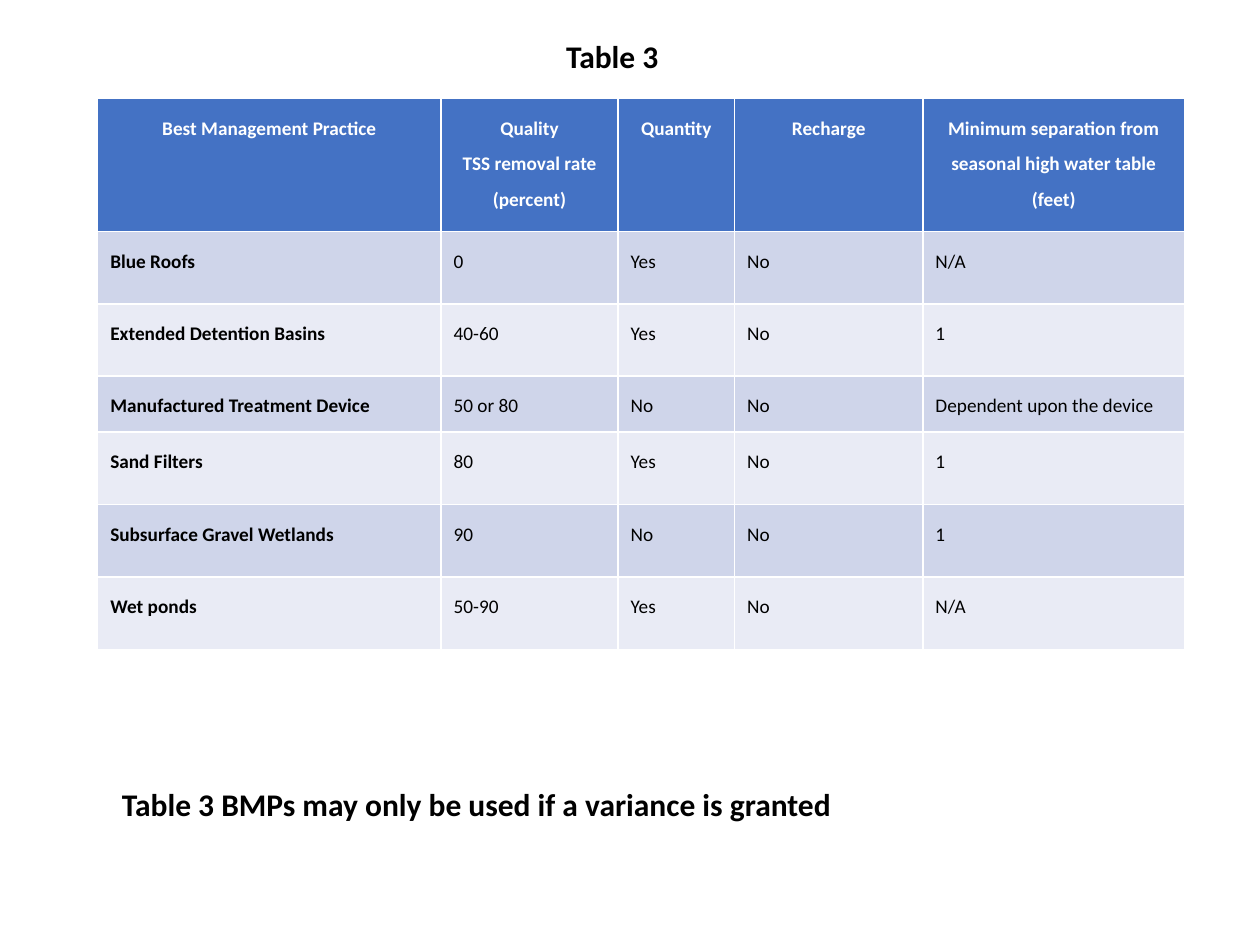
"""Build the Table 3 slide of best management practices."""
from pptx import Presentation
from pptx.dml.color import RGBColor
from pptx.enum.text import MSO_ANCHOR, PP_ALIGN
from pptx.util import Pt

COLORS = {
    "header": "4472C4",
    "odd": "CFD5EA",
    "even": "E9EBF5",
    "light": "FFFFFF",
    "dark": "000000",
}


def write(frame, text, size=18, color="dark", bold=True, align=PP_ALIGN.LEFT, spacing=1.0):
    frame.word_wrap = True
    frame.text = text
    for paragraph in frame.paragraphs:
        paragraph.alignment = align
        paragraph.line_spacing = spacing
        font = paragraph.runs[0].font
        font.name = "Calibri"
        font.size = Pt(size)
        font.bold = bold
        font.color.rgb = RGBColor.from_string(COLORS[color])


presentation = Presentation()
presentation.slide_width, presentation.slide_height = Pt(720), Pt(540)
slide = presentation.slides.add_slide(presentation.slide_layouts[5])

title = slide.shapes.title
title.left, title.top, title.width, title.height = Pt(262.8), Pt(17.3), Pt(174.2), Pt(29)
write(title.text_frame, "Table 3", align=PP_ALIGN.CENTER)
title.text_frame.vertical_anchor = MSO_ANCHOR.TOP

practices = [
    ("Best Management Practice", "Quality\nTSS removal rate (percent)", "Quantity", "Recharge",
     "Minimum separation from seasonal high water table\n(feet)"),
    ("Blue Roofs", "0", "Yes", "No", "N/A"),
    ("Extended Detention Basins", "40-60", "Yes", "No", "1"),
    ("Manufactured Treatment Device", "50 or 80", "No", "No", "Dependent upon the device"),
    ("Sand Filters", "80", "Yes", "No", "1"),
    ("Subsurface Gravel Wetlands", "90", "No", "No", "1"),
    ("Wet ponds", "50-90", "Yes", "No", "N/A"),
]
column_widths = [196.2, 101.2, 66.6, 107.6, 149.6]
row_heights = [76, 41.4, 41.4, 31.9, 41.4, 41.4, 41.4]

table = slide.shapes.add_table(
    len(practices), len(column_widths), Pt(55.8), Pt(56.2),
    Pt(sum(column_widths)), Pt(sum(row_heights)),
).table
for column, width in zip(table.columns, column_widths):
    column.width = Pt(width)
for row, height in zip(table.rows, row_heights):
    row.height = Pt(height)

for row_index, practice in enumerate(practices):
    is_header = row_index == 0
    band = "header" if is_header else "odd" if row_index % 2 else "even"
    for column_index, text in enumerate(practice):
        cell = table.cell(row_index, column_index)
        cell.fill.solid()
        cell.fill.fore_color.rgb = RGBColor.from_string(COLORS[band])
        write(
            cell.text_frame, text, size=11, spacing=1.5,
            color="light" if is_header else "dark",
            bold=is_header or column_index == 0,
            align=PP_ALIGN.CENTER if is_header else PP_ALIGN.LEFT,
        )

variance_note = slide.shapes.add_textbox(Pt(62.6), Pt(445), Pt(458), Pt(29))
write(variance_note.text_frame, "Table 3 BMPs may only be used if a variance is granted")

presentation.save("out.pptx")
